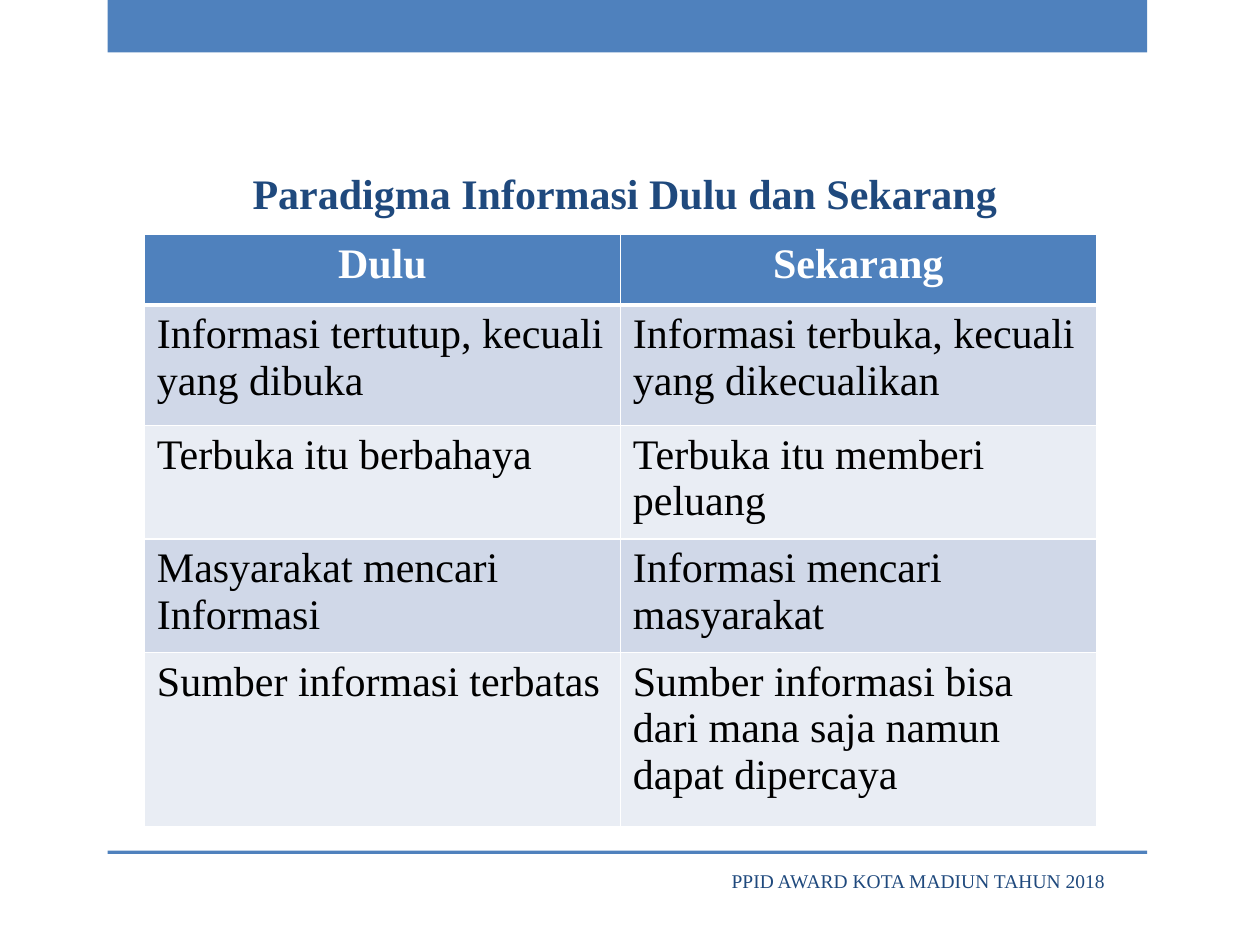
from lxml import etree
from pptx import Presentation
from pptx.dml.color import RGBColor
from pptx.enum import shapes, text
from pptx.oxml import ns
from pptx.util import Pt

COLORS = {"blue": "4F81BD", "navy": "1F497D", "white": "FFFFFF",
          "black": "000000", "band": "D0D8E8", "pale": "E9EDF4"}
FONT = "Times New Roman"
ROWS = [
    ("Dulu", "Sekarang"),
    ("Informasi tertutup, kecuali yang dibuka",
     "Informasi terbuka, kecuali yang dikecualikan"),
    ("Terbuka itu berbahaya", "Terbuka itu memberi peluang"),
    ("Masyarakat mencari Informasi", "Informasi mencari masyarakat"),
    ("Sumber informasi terbatas",
     "Sumber informasi bisa dari mana saja namun dapat dipercaya"),
]
ROW_HEIGHTS = [40.3, 69, 60.5, 60.5, 99.4]


def rgb(name):
    return RGBColor.from_string(COLORS[name])


def write(frame, words, color, align=text.PP_ALIGN.LEFT, **font):
    para = frame.paragraphs[0]
    para.alignment = align
    span = para.add_run()
    span.text = words
    span.font.color.rgb = rgb(color)
    for key, value in {"name": FONT, "size": Pt(24), "bold": False, **font}.items():
        setattr(span.font, key, value)


def add_bar(page, box):
    bar = page.shapes.add_shape(shapes.MSO_SHAPE.RECTANGLE, *map(Pt, box))
    bar.shadow.inherit = False
    bar.fill.solid()
    bar.fill.fore_color.rgb = rgb("blue")
    bar.line.fill.background()


def add_label(page, box, words, anchor, **style):
    frame = page.shapes.add_textbox(*map(Pt, box)).text_frame
    frame.word_wrap = True
    frame.vertical_anchor = anchor
    write(frame, words, "navy", **style)


def set_borders(cell, **widths):
    """Draw white cell borders; widths in points are keyed L, R, T, B."""
    properties = cell._tc.get_or_add_tcPr()
    for side, width in widths.items():
        line = etree.SubElement(properties, ns.qn(f"a:ln{side}"), w=str(Pt(width)))
        fill = etree.SubElement(line, ns.qn("a:solidFill"))
        etree.SubElement(fill, ns.qn("a:srgbClr"), val=COLORS["white"])


def add_comparison(page, box):
    table = page.shapes.add_table(len(ROWS), 2, *map(Pt, box)).table
    for column in table.columns:
        column.width = Pt(box[2] / 2)
    for index, (words, height) in enumerate(zip(ROWS, ROW_HEIGHTS)):
        table.rows[index].height = Pt(height)
        header = index == 0
        fill = "blue" if header else "band" if index % 2 else "pale"
        for cell, entry in zip(table.rows[index].cells, words):
            set_borders(cell, L=1, R=1, T=3 if index == 1 else 1, B=3 if header else 1)
            cell.fill.solid()
            cell.fill.fore_color.rgb = rgb(fill)
            write(cell.text_frame, entry, "white" if header else "black",
                  text.PP_ALIGN.CENTER if header else text.PP_ALIGN.LEFT, bold=header)


def main():
    deck = Presentation()
    deck.slide_width, deck.slide_height = Pt(720), Pt(540)
    page = deck.slides.add_slide(deck.slide_layouts[6])
    add_bar(page, (61.5, 0, 594, 30))
    add_bar(page, (61.5, 486, 594, 2))
    add_label(page, (60, 91, 594, 38), "Paradigma Informasi Dulu dan Sekarang",
              text.MSO_ANCHOR.MIDDLE, align=text.PP_ALIGN.CENTER, bold=True)
    add_label(page, (411, 493, 238, 25), "PPID AWARD KOTA MADIUN TAHUN 2018",
              text.MSO_ANCHOR.TOP, size=Pt(11.1))
    add_comparison(page, (82.5, 134, 544, sum(ROW_HEIGHTS)))
    deck.save("out.pptx")


if __name__ == "__main__":
    main()
